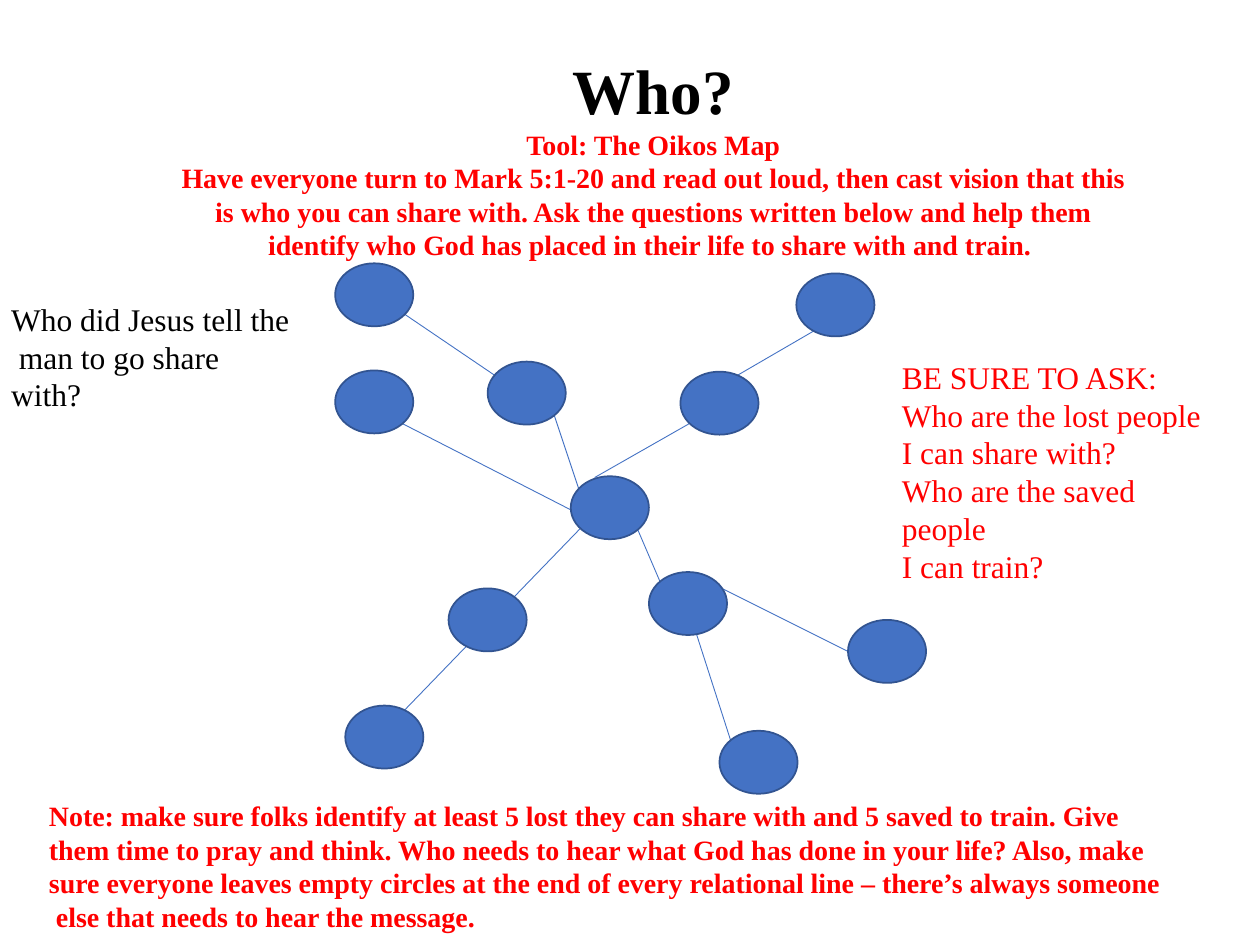
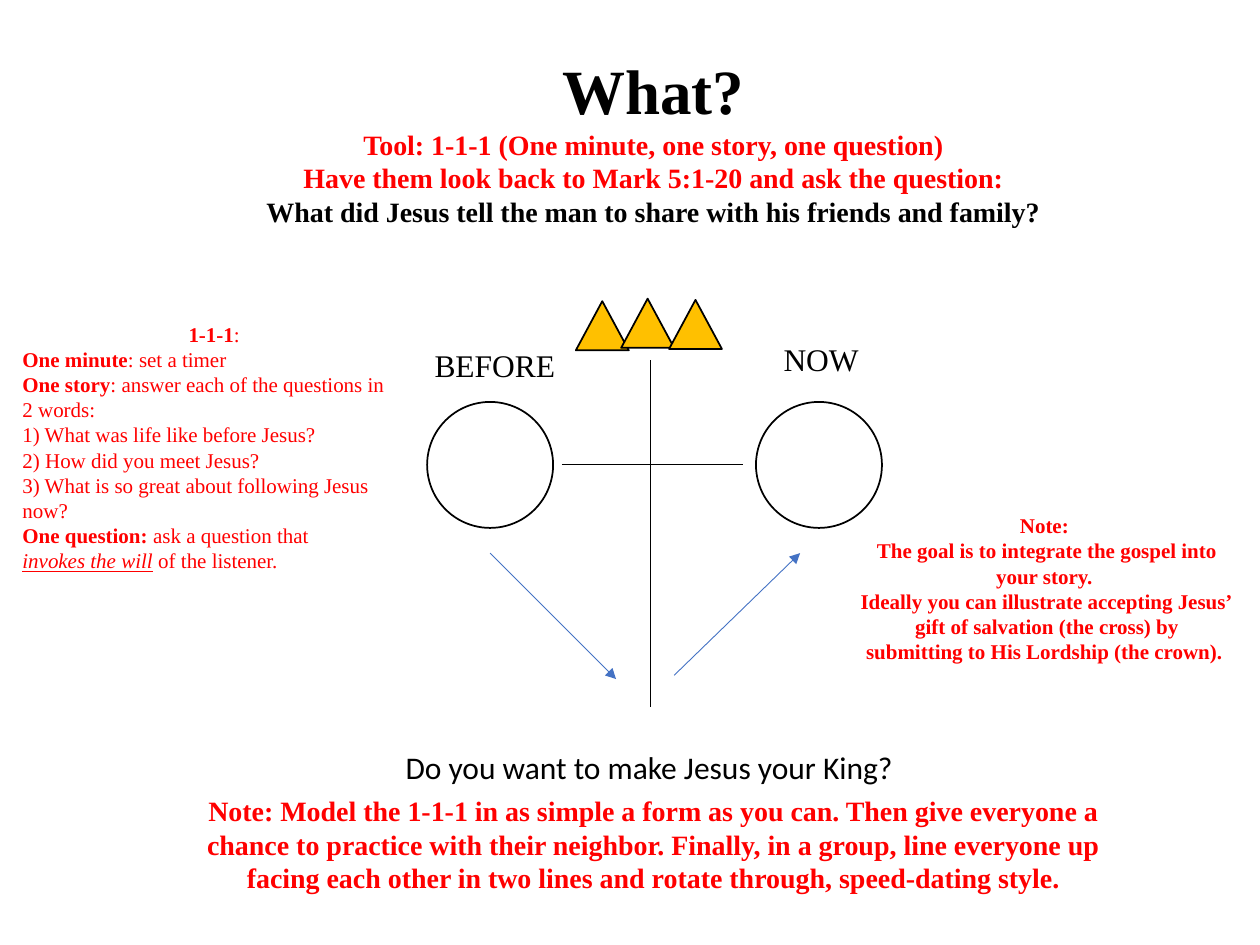
from lxml.etree import SubElement
from pptx import Presentation
from pptx.dml.color import RGBColor
from pptx.enum.shapes import MSO_CONNECTOR, MSO_SHAPE
from pptx.enum.text import PP_ALIGN
from pptx.oxml.ns import qn
from pptx.util import Inches, Pt

BLACK, RED, BLUE, NAVY, GOLD = "000000", "FF0000", "4472C4", "325491", "FFC000"
SERIF, SANS = "Times New Roman", "Calibri"
LINE_PITCH = 1.2
HEADING_BOX = (1.29, 0.36, 7.79, 1.78)
BOLD = {"bold": True}
EMPHASIS = {"italic": True, "underline": True}


def color(value):
    return RGBColor.from_string(value)


def add_text(slide, box, lines, size=18, ink=BLACK, font=SERIF, **shared):
    """Each line is a string, or a dict with runs (text, format) and its own size, ink or align."""
    frame = slide.shapes.add_textbox(*map(Inches, box)).text_frame
    frame.word_wrap = True
    for index, line in enumerate(lines):
        if isinstance(line, str):
            line = {"runs": [(line, {})]}
        paragraph = frame.paragraphs[0] if index == 0 else frame.add_paragraph()
        paragraph.alignment = line.get("align", shared.get("align", PP_ALIGN.LEFT))
        line_size = line.get("size", size)
        paragraph.line_spacing = Pt(line_size * LINE_PITCH)
        for text, run_format in line["runs"]:
            run = paragraph.add_run()
            run.text = text
            values = {"name": font, "size": Pt(line_size),
                      "bold": shared.get("bold", False), **run_format}
            for name, value in values.items():
                setattr(run.font, name, value)
            run.font.color.rgb = color(line.get("ink", ink))


def add_heading(slide, title, lines):
    title_line = {"runs": [(title, {})], "size": 36, "ink": BLACK}
    add_text(slide, HEADING_BOX, [title_line, *lines], 16, RED,
             bold=True, align=PP_ALIGN.CENTER)


def add_outlined(slide, kind, box, line, fill=None):
    shape = slide.shapes.add_shape(kind, *map(Inches, box))
    shape.shadow.inherit = False
    if fill:
        shape.fill.solid()
        shape.fill.fore_color.rgb = color(fill)
    else:
        shape.fill.background()
    shape.line.color.rgb = color(line)
    shape.line.width = Pt(1)


def add_line(slide, origin, start, end, ink, arrow=False):
    left, top = origin
    ends = (left + start[0], top + start[1], left + end[0], top + end[1])
    connector = slide.shapes.add_connector(MSO_CONNECTOR.STRAIGHT, *map(Inches, ends))
    connector.line.color.rgb = color(ink)
    connector.line.width = Pt(0.5)
    if arrow:
        SubElement(connector.line._get_or_add_ln(), qn("a:tailEnd"), type="triangle")
    SubElement(connector._element.spPr, qn("a:effectLst"))


def add_oikos_map(slide, left, top):
    relations = [
        ((2.4, 2.11), (2.58, 2.53)), ((2.87, 2.95), (3.14, 3.79)),
        ((2.99, 2.54), (4.07, 3.08)), ((1.95, 2.1), (0.17, 3.94)),
        ((2.06, 1.7), (2.99, 1.17)), ((3.07, 0.96), (4, 0.42)),
        ((1.98, 1.93), (1.74, 1.21)), ((2.15, 2.1), (0.53, 1.27)),
        ((1.74, 1.21), (0.31, 0.24)),
    ]
    people = [
        (1.87, 1.69), (2.49, 2.45), (0.9, 2.58), (4.07, 2.83), (0.08, 3.51),
        (3.05, 3.71), (2.74, 0.86), (1.21, 0.78), (0, 0.85), (0, 0), (3.66, 0.08),
    ]
    for start, end in relations:
        add_line(slide, (left, top), start, end, BLUE)
    for x, y in people:
        add_outlined(slide, MSO_SHAPE.OVAL, (left + x, top + y, 0.62, 0.5), NAVY, BLUE)


def add_story_diagram(slide, left, top):
    """Before and now circles, with the cross, the crown and the arrows between them."""
    origin = (left, top)
    for x in (0, 2.61):
        add_outlined(slide, MSO_SHAPE.OVAL, (left + x, top + 0.82, 1, 1), BLACK)
    add_line(slide, origin, (1.77, 0.49), (1.77, 3.24), BLACK)
    add_line(slide, origin, (1.07, 1.32), (2.51, 1.32), BLACK)
    add_line(slide, origin, (0.5, 2.02), (1.5, 3.02), BLUE, arrow=True)
    add_line(slide, origin, (1.96, 2.99), (2.96, 2.02), BLUE, arrow=True)
    add_text(slide, (left - 0.04, top + 0.33, 1.19, 0.4), ["BEFORE"])
    add_text(slide, (left + 2.73, top + 0.28, 0.81, 0.4), ["NOW"])
    for x, y in ((1.18, 0.02), (1.54, 0), (1.92, 0.01)):
        add_outlined(slide, MSO_SHAPE.ISOSCELES_TRIANGLE,
                     (left + x, top + y, 0.42, 0.39), BLACK, GOLD)


def build_who_slide(slide):
    add_heading(slide, "Who?", [
        "Tool: The Oikos Map",
        "Have everyone turn to Mark 5:1-20 and read out loud, then cast vision that this "
        "is who you can share with. Ask the questions written below and help them "
        "identify who God has placed in their life to share with and train. ",
    ])
    add_text(slide, (-0.01, 2.33, 2.43, 1),
             ["Who did Jesus tell the", " man to go share with?"])
    add_oikos_map(slide, 2.66, 2.09)
    add_text(slide, (0.29, 6.29, 9.09, 1.21), [
        "Note: make sure folks identify at least 5 lost they can share with and 5 saved to train. Give",
        "them time to pray and think. Who needs to hear what God has done in your life? Also, make",
        "sure everyone leaves empty circles at the end of every relational line – there’s always someone",
        " else that needs to hear the message.",
    ], 16, RED, bold=True)
    add_text(slide, (7.06, 2.79, 2.73, 1.9), [
        "BE SURE TO ASK:",
        "Who are the lost people",
        "I can share with?",
        "Who are the saved people",
        "I can train?",
    ], ink=RED)


def build_what_slide(slide):
    add_heading(slide, "What?", [
        "Tool: 1-1-1 (One minute, one story, one question)",
        "Have them look back to Mark 5:1-20 and ask the question:",
        {"runs": [("What did Jesus tell the man to share with his friends and family?", {})],
         "ink": BLACK},
    ])
    add_story_diagram(slide, 3.39, 2.37)
    add_text(slide, (0.08, 2.5, 3.24, 2.1), [
        {"runs": [("1-1-1", BOLD), (":", {})], "align": PP_ALIGN.CENTER},
        {"runs": [("One minute", BOLD), (": set a timer", {})]},
        {"runs": [("One story", BOLD), (": answer each of the questions in", {})]},
        "2 words:",
        "1) What was life like before Jesus?",
        "2) How did you meet Jesus?",
        "3) What is so great about following Jesus now?",
        {"runs": [("One question: ", BOLD), ("ask a question that", {})]},
        {"runs": [("invokes the will", EMPHASIS), (" of the listener.", {})]},
    ], 12, RED)
    add_text(slide, (6.71, 4.02, 3.2, 1.31), [
        "Note: ",
        "The goal is to integrate the gospel into",
        "your story. ",
        "Ideally you can illustrate accepting Jesus’",
        " gift of salvation (the cross) by ",
        "submitting to His Lordship (the crown). ",
    ], 12, RED, bold=True, align=PP_ALIGN.CENTER)
    add_text(slide, (3.12, 5.89, 4.12, 0.4),
             ["Do you want to make Jesus your King?"], font=SANS)
    add_text(slide, (1.29, 6.25, 7.79, 0.9), [
        "Note: Model the 1-1-1 in as simple a form as you can. Then give everyone a "
        "chance to practice with their neighbor. Finally, in a group, line everyone up "
        "facing each other in two lines and rotate through, speed-dating style.",
    ], 16, RED, bold=True, align=PP_ALIGN.CENTER)


def main():
    presentation = Presentation()
    presentation.slide_width = Inches(10)
    presentation.slide_height = Inches(7.5)
    blank = presentation.slide_layouts[6]
    for build in (build_who_slide, build_what_slide):
        build(presentation.slides.add_slide(blank))
    presentation.save("out.pptx")


if __name__ == "__main__":
    main()
